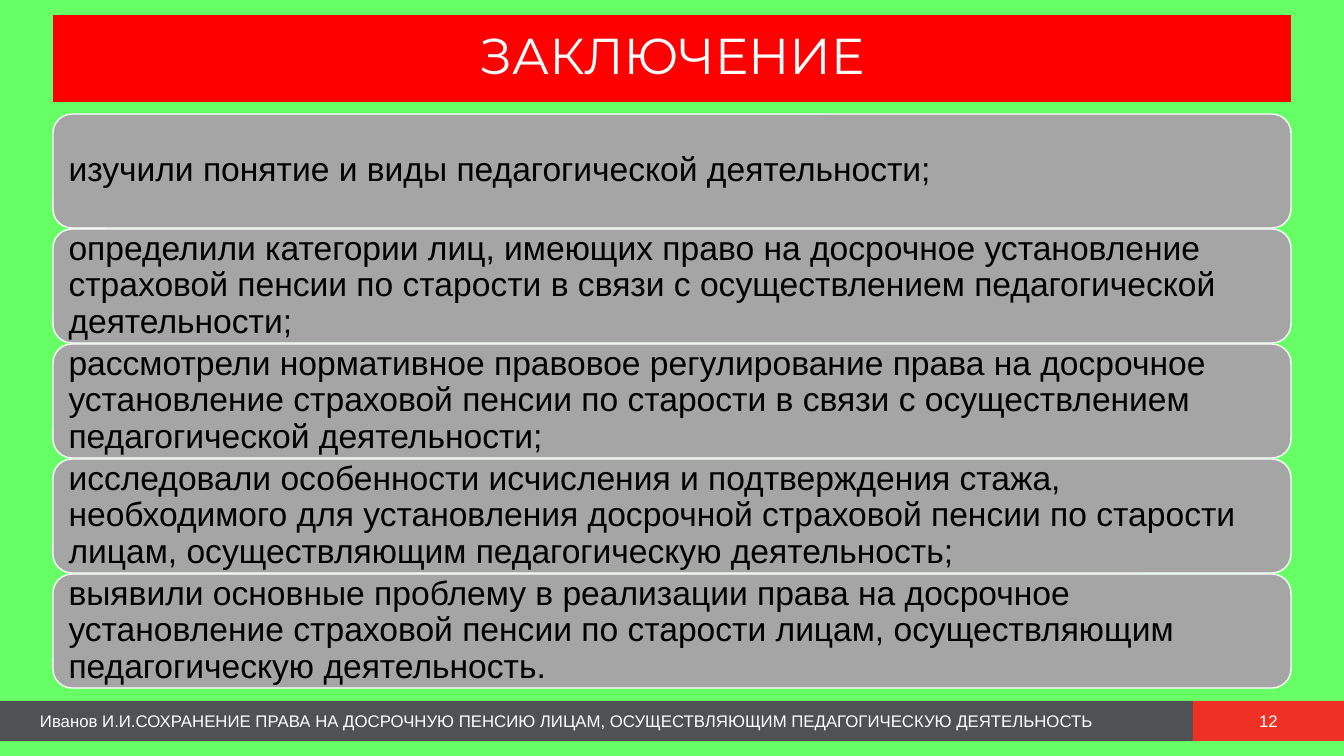
from pptx import Presentation
from pptx.dml.color import RGBColor
from pptx.enum import shapes, text
from pptx.util import Pt

PX = 914400 / 100.8
RECT = shapes.MSO_SHAPE.RECTANGLE
ROUND = shapes.MSO_SHAPE.ROUNDED_RECTANGLE
LEFT, MID = text.PP_ALIGN.LEFT, text.PP_ALIGN.CENTER

GOALS = [
    "изучили понятие и виды педагогической деятельности;",
    "определили категории лиц, имеющих право на досрочное установление "
    "страховой пенсии по старости в связи с осуществлением педагогической "
    "деятельности;",
    "рассмотрели нормативное правовое регулирование права на досрочное "
    "установление страховой пенсии по старости в связи с осуществлением "
    "педагогической деятельности;",
    "исследовали особенности исчисления и подтверждения стажа, необходимого "
    "для установления досрочной страховой пенсии по старости лицам, "
    "осуществляющим педагогическую деятельность;",
    "выявили основные проблему в реализации права на досрочное установление "
    "страховой пенсии по старости лицам, осуществляющим педагогическую "
    "деятельность.",
]
TOPIC = ("Иванов И.И.СОХРАНЕНИЕ ПРАВА НА ДОСРОЧНУЮ ПЕНСИЮ ЛИЦАМ, "
         "ОСУЩЕСТВЛЯЮЩИМ ПЕДАГОГИЧЕСКУЮ ДЕЯТЕЛЬНОСТЬ")


def px(n):
    return round(n * PX)


def paint(fill, color):
    fill.solid()
    fill.fore_color.rgb = RGBColor.from_string(color)


def write(shape, words, size, color="FFFFFF", font="Arial", align=LEFT, inset=10):
    """Fill a shape with one vertically centred paragraph and return it."""
    frame = shape.text_frame
    frame.word_wrap = True
    frame.auto_size = text.MSO_AUTO_SIZE.NONE
    frame.vertical_anchor = text.MSO_ANCHOR.MIDDLE
    frame.margin_left, frame.margin_right = px(inset), px(10)
    frame.margin_top = frame.margin_bottom = px(5)
    para = frame.paragraphs[0]
    para.alignment = align
    run = para.add_run()
    run.text = words
    run.font.size, run.font.name = Pt(size), font
    paint(run.font.fill, color)
    return para


def block(slide, kind, box, color):
    shape = slide.shapes.add_shape(kind, *map(px, box))
    shape.shadow.inherit = False
    paint(shape.fill, color)
    shape.line.fill.background()
    return shape


def banner(slide, box, words):
    title = slide.shapes.title
    title.left, title.top, title.width, title.height = map(px, box)
    paint(title.fill, "FF0000")
    para = write(title, words, 36, font="Montserrat", align=MID)
    para.line_spacing, para.space_before = 0.9, Pt(10)


def cards(slide, box, goals):
    """Stack one rounded card per goal, 1 px apart."""
    left, top, width, height = box
    step = (height + 1) // len(goals)
    for i, goal in enumerate(goals):
        card = block(slide, ROUND, (left, top + i * step, width, step - 1), "A5A5A5")
        paint(card.line.fill, "FFFFFF")
        card.line.width = Pt(1)
        write(card, goal, 24, "000000").line_spacing = 0.9


def footer(slide, box, topic, number):
    left, top, width, height = box
    tab = 151
    bar = block(slide, RECT, (left, top, width - tab, height), "505153")
    write(bar, topic, 12, inset=40)
    page = block(slide, RECT, (left + width - tab, top, tab, height), "EE3124")
    write(page, number, 12, align=MID)


def main():
    deck = Presentation()
    deck.slide_width, deck.slide_height = px(1344), px(756)
    slide = deck.slides.add_slide(deck.slide_layouts[5])
    paint(slide.background.fill, "66FF66")
    footer(slide, (0, 701, 1344, 40), TOPIC, "12")
    banner(slide, (53, 15, 1238, 87), "ЗАКЛЮЧЕНИЕ")
    cards(slide, (53, 114, 1238, 574), GOALS)
    deck.save("out.pptx")


if __name__ == "__main__":
    main()
